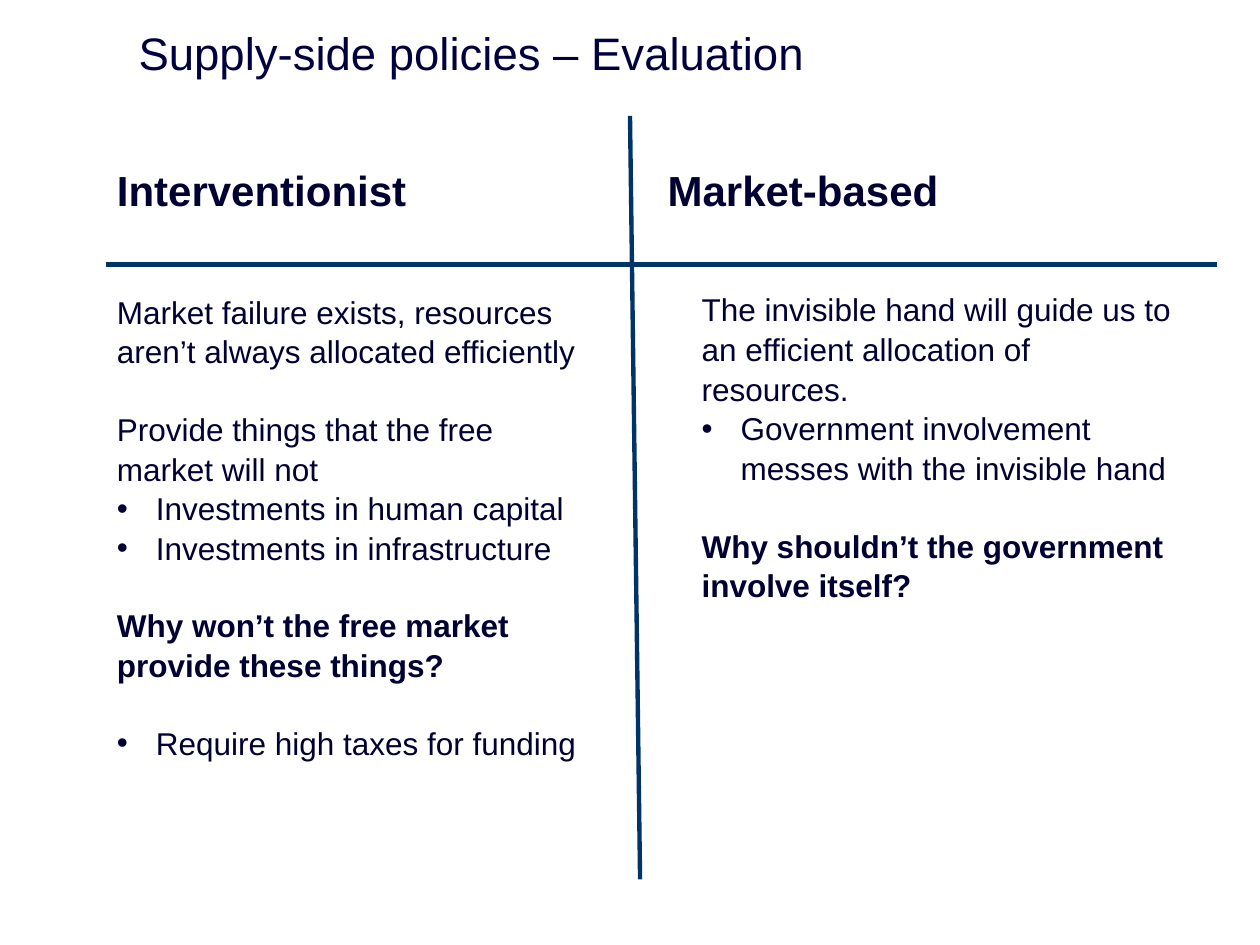
from lxml.etree import SubElement
from pptx import Presentation
from pptx.dml.color import RGBColor
from pptx.enum.shapes import MSO_CONNECTOR
from pptx.enum.text import MSO_ANCHOR, PP_ALIGN
from pptx.oxml.ns import qn
from pptx.util import Inches, Pt

COLORS = {"title": "00003E", "text": "000032", "rule": "003366"}
FONT = "Arial"
BLANK_LINE = 21.6
LINE_SPACING = 1.05

INTERVENTIONIST = [
    ("Market failure exists, resources aren’t always allocated efficiently", {}),
    ("Provide things that the free market will not", {"before": BLANK_LINE}),
    ("Investments in human capital", {"bullet": True}),
    ("Investments in infrastructure", {"bullet": True}),
    ("Why won’t the free market provide these things?",
     {"before": BLANK_LINE, "bold": True}),
    ("Require high taxes for funding", {"before": BLANK_LINE, "bullet": True}),
]
MARKET_BASED = [
    ("The invisible hand will guide us to an efficient allocation of resources.", {}),
    ("Government involvement messes with the invisible hand", {"bullet": True}),
    ("Why shouldn’t the government involve itself?",
     {"before": BLANK_LINE, "bold": True}),
]


def write(para, text, size=18, color="text", bold=False, bullet=False, before=0,
          spacing=1.0):
    para.alignment = PP_ALIGN.LEFT
    para.space_before = Pt(before)
    para.line_spacing = spacing
    if bullet:
        properties = para._p.get_or_add_pPr()
        properties.set("marL", str(Inches(0.31)))
        properties.set("indent", str(-Inches(0.31)))
        SubElement(properties, qn("a:buFont"), typeface=FONT)
        SubElement(properties, qn("a:buChar"), char="•")
    para.font.name = FONT
    para.font.size = Pt(size)
    para.font.bold = bold
    para.font.color.rgb = RGBColor.from_string(COLORS[color])
    para.add_run().text = text


def add_title(page, text, left, top, width, height):
    title = page.shapes.title
    title.left, title.top = Inches(left), Inches(top)
    title.width, title.height = Inches(width), Inches(height)
    title.text_frame.vertical_anchor = MSO_ANCHOR.MIDDLE
    write(title.text_frame.paragraphs[0], text, size=26, color="title")


def add_text(page, entries, left, top, width, height):
    box = page.shapes.add_textbox(
        Inches(left), Inches(top), Inches(width), Inches(height))
    frame = box.text_frame
    frame.word_wrap = True
    for index, (text, style) in enumerate(entries):
        para = frame.add_paragraph() if index else frame.paragraphs[0]
        write(para, text, **style)


def add_column(page, heading, entries, heading_left, body_left, body_top, body_height):
    add_text(page, [(heading, {"size": 24, "bold": True})],
             heading_left, 1.26, 3.93, 0.5)
    body = [(text, {"spacing": LINE_SPACING, **style}) for text, style in entries]
    add_text(page, body, body_left, body_top, 3.93, body_height)


def add_rule(page, start, end):
    rule = page.shapes.add_connector(
        MSO_CONNECTOR.STRAIGHT, *(Inches(value) for value in start + end))
    rule.line.color.rgb = RGBColor.from_string(COLORS["rule"])
    rule.line.width = Pt(2.5)
    SubElement(rule._element.spPr, qn("a:effectLst"))


def main():
    deck = Presentation()
    deck.slide_width, deck.slide_height = Inches(10), Inches(7.5)
    page = deck.slides.add_slide(deck.slide_layouts[5])
    add_title(page, "Supply-side policies – Evaluation", 1, 0.16, 9, 0.51)
    add_rule(page, (5, 0.92), (5.08, 6.98))
    add_rule(page, (0.84, 2.1), (9.66, 2.1))
    add_column(page, "Interventionist", INTERVENTIONIST, 0.83, 0.83, 2.26, 4.04)
    add_column(page, "Market-based", MARKET_BASED, 5.2, 5.47, 2.24, 3.74)
    deck.save("out.pptx")


if __name__ == "__main__":
    main()
